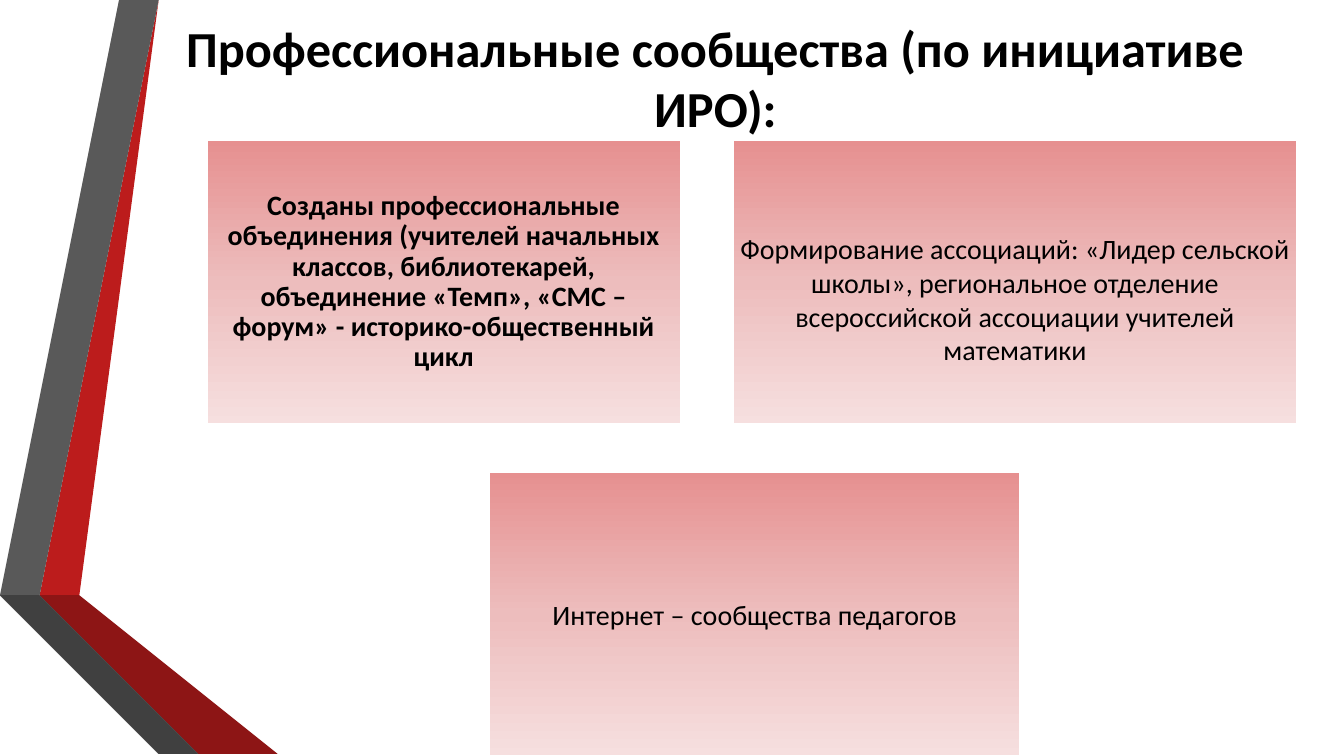
import pptx
import pptx.util
import pptx.dml.color
import pptx.enum.text
import lxml.etree

Cm, Pt = pptx.util.Cm, pptx.util.Pt
RGB = pptx.dml.color.RGBColor

BLACK = RGB(0x00, 0x00, 0x00)
WHITE = RGB(0xFF, 0xFF, 0xFF)
RED = RGB(0xBC, 0x1C, 0x1C)
RED_DARK = RGB(0x8D, 0x15, 0x15)
RED_EDGE = RGB(0x5E, 0x0E, 0x0E)
GREY = RGB(0x59, 0x59, 0x59)
GREY_DARK = RGB(0x40, 0x40, 0x40)
GREY_EDGE = RGB(0x26, 0x26, 0x26)
PINK_TOP = RGB(0xE6, 0x90, 0x90)
PINK_MID = RGB(0xED, 0xBD, 0xBD)
PINK_END = RGB(0xF6, 0xDF, 0xDF)

# Content; all lengths in cm
FONT = "Calibri"
SLIDE_W, SLIDE_H = 33.87, 19.05
TITLE = "Профессиональные сообщества (по инициативе ИРО):"
TITLE_AREA = (4.11, 0.66, 27.84, 2.57)

BOX_H, ROW_1 = 7.16, 3.53
ROW_2 = SLIDE_H - BOX_H
# left, top, width, inset, extra top inset, bold, line spacing, text
BOXES = [
    (5.21, ROW_1, 11.94, 0.2, 0, True, 0.9,
     "Созданы профессиональные объединения (учителей начальных классов, "
     "библиотекарей, объединение «Темп», «СМС – форум» - "
     "историко-общественный цикл"),
    (18.47, ROW_1, 14.22, 0.18, 0.86, False, 1.0,
     "Формирование ассоциаций: «Лидер сельской школы», региональное отделение "
     "всероссийской ассоциации учителей математики"),
    (12.34, ROW_2, 13.36, 0.2, 0, False, 1.0,
     "Интернет – сообщества педагогов"),
]
GRADIENT = [(0, PINK_TOP), (50, PINK_MID), (100, PINK_END)]

RIBBONS = [
    (RED, [(1.27, 14.68), (1.96, 14.81), (4.39, 0), (3.68, 0)]),
    (GREY, [(3.53, 0), (2.82, 0), (0.41, 14.55), (1.12, 14.66)]),
    (GREY_EDGE, [(0.41, 14.55), (3.68, SLIDE_H), (3.84, SLIDE_H)]),
    (RED_EDGE, [(1.27, 14.7), (5.28, SLIDE_H), (5.44, SLIDE_H)]),
    (RED_DARK, [(1.27, 14.7), (5.44, SLIDE_H), (7.19, SLIDE_H),
                (1.96, 14.81), (1.27, 14.68)]),
    (GREY_DARK, [(5.13, SLIDE_H), (1.22, 14.81), (1.09, 14.68), (1.12, 14.66),
                 (0.41, 14.55), (3.84, SLIDE_H)]),
]


def write(tf, text, size, bold, spacing=1.0):
    tf.word_wrap = True
    tf.vertical_anchor = pptx.enum.text.MSO_ANCHOR.MIDDLE
    p = tf.paragraphs[0]
    p.alignment = pptx.enum.text.PP_ALIGN.CENTER
    p.line_spacing = spacing
    r = p.add_run()
    r.text = text
    r.font.name = FONT
    r.font.size = Pt(size)
    r.font.bold = bold
    r.font.color.rgb = BLACK


def fill_gradient(sp):
    sp.fill.gradient()
    sp.fill.gradient_angle = 270
    ns = "{http://schemas.openxmlformats.org/drawingml/2006/main}"
    stops = sp._element.spPr.find(f"{ns}gradFill/{ns}gsLst")
    for gs in list(stops):
        stops.remove(gs)
    for pos, color in GRADIENT:
        gs = lxml.etree.SubElement(stops, ns + "gs", pos=str(pos * 1000))
        lxml.etree.SubElement(gs, ns + "srgbClr", val=str(color))


def main():
    prs = pptx.Presentation()
    prs.slide_width, prs.slide_height = Cm(SLIDE_W), Cm(SLIDE_H)
    s = prs.slides.add_slide(prs.slide_layouts[6])

    # Folded ribbons on the left
    for color, points in RIBBONS:
        fb = s.shapes.build_freeform(*points[0], scale=Cm(1))
        fb.add_line_segments(points[1:], close=True)
        sp = fb.convert_to_shape()
        sp.shadow.inherit = False
        sp.fill.solid()
        sp.fill.fore_color.rgb = color
        sp.line.fill.background()

    # Title
    sp = s.shapes.add_textbox(*map(Cm, TITLE_AREA))
    write(sp.text_frame, TITLE, 36, True)

    # Gradient boxes
    for left, top, width, inset, extra, bold, spacing, text in BOXES:
        sp = s.shapes.add_shape(pptx.enum.shapes.MSO_SHAPE.RECTANGLE,
                                Cm(left), Cm(top), Cm(width), Cm(BOX_H))
        sp.shadow.inherit = False
        fill_gradient(sp)
        sp.line.color.rgb = WHITE
        sp.line.width = Pt(1.25)
        tf = sp.text_frame
        tf.margin_left = tf.margin_right = tf.margin_bottom = Cm(inset)
        tf.margin_top = Cm(inset + extra)
        write(tf, text, 20, bold, spacing)

    prs.save("out.pptx")


if __name__ == "__main__":
    main()
